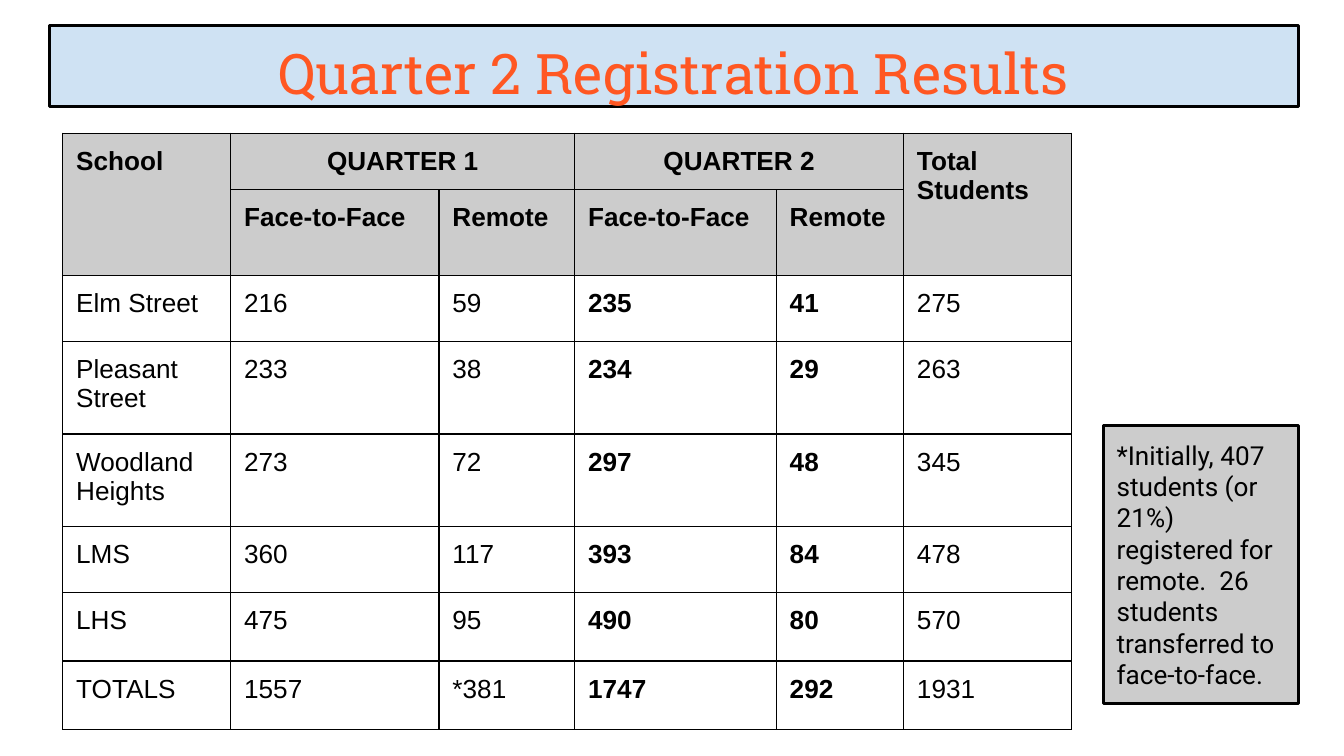
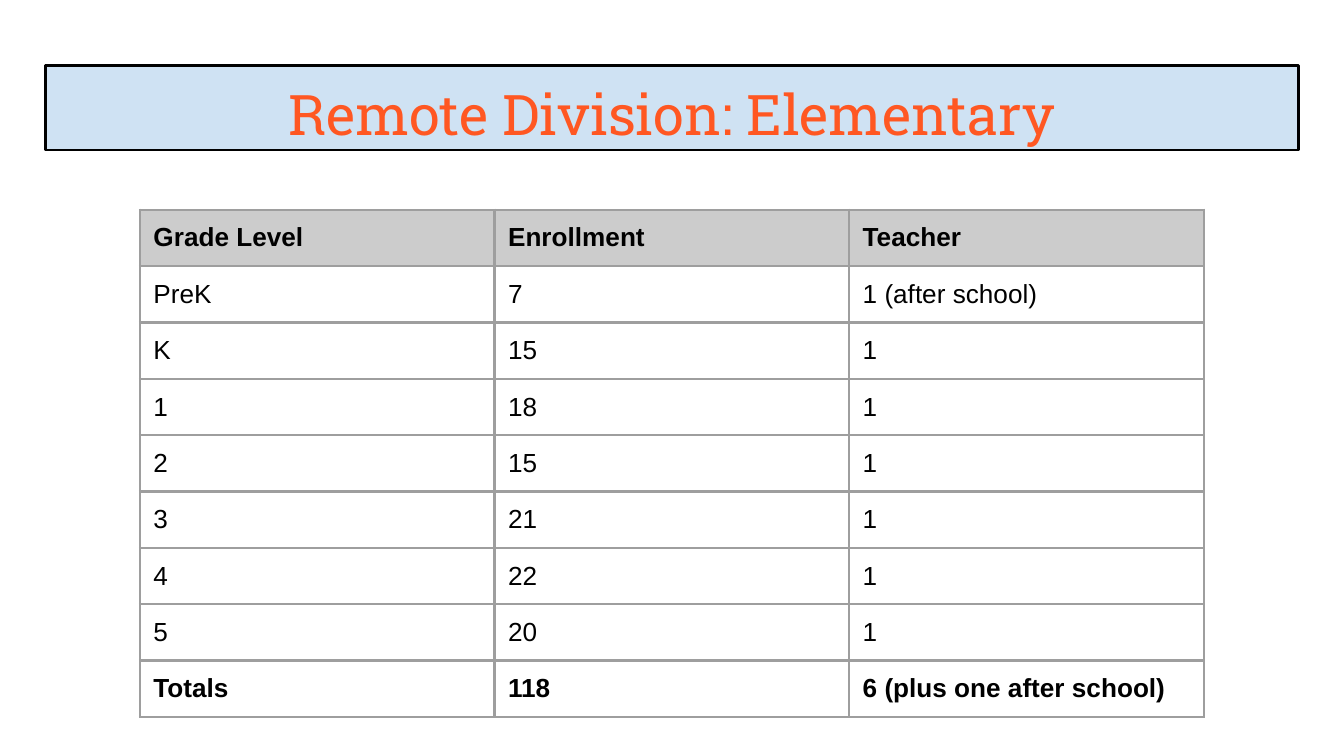
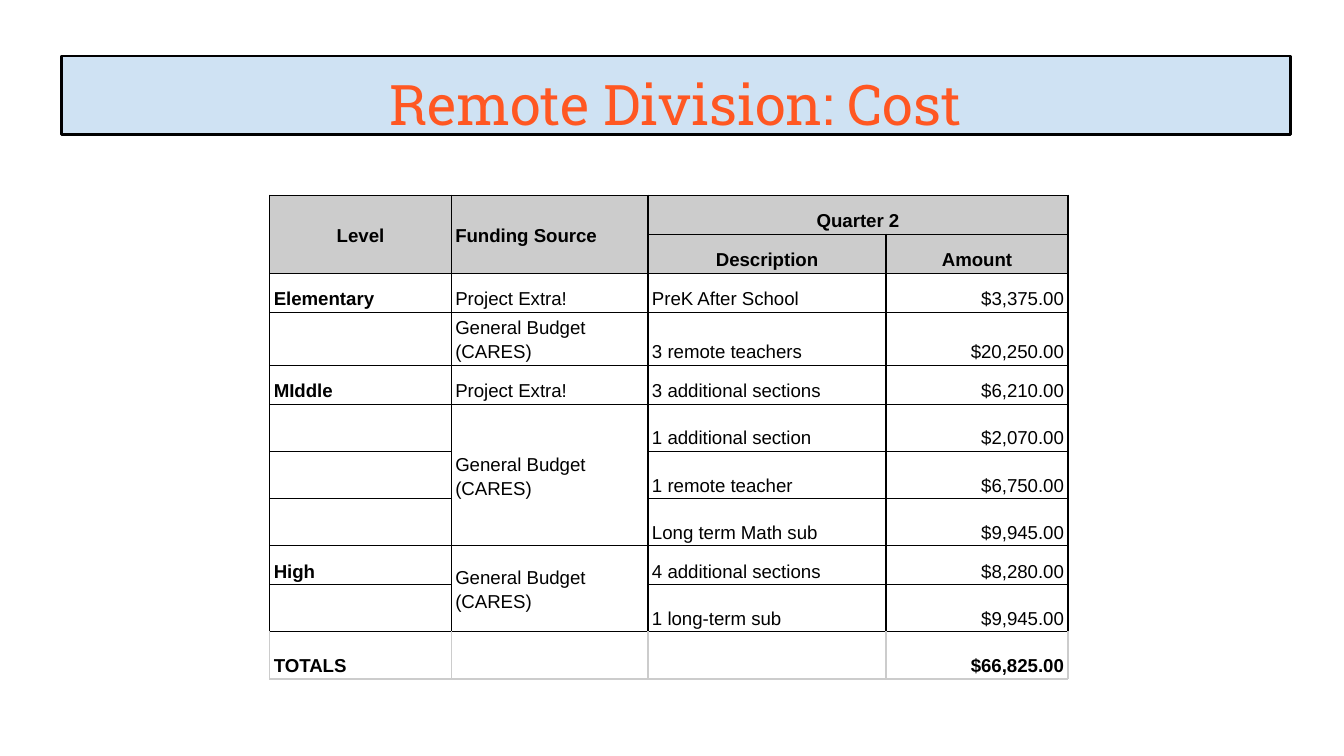
"""Build three slides on remote learning: registration, enrolment and cost."""
from lxml import etree
from pptx import Presentation
from pptx.dml.color import RGBColor
from pptx.enum.shapes import MSO_SHAPE
from pptx.enum.text import MSO_ANCHOR, PP_ALIGN
from pptx.oxml.ns import qn
from pptx.util import Pt

RECT = MSO_SHAPE.RECTANGLE
LEFT, CENTER, RIGHT = PP_ALIGN.LEFT, PP_ALIGN.CENTER, PP_ALIGN.RIGHT
TOP, MIDDLE, BOTTOM = MSO_ANCHOR.TOP, MSO_ANCHOR.MIDDLE, MSO_ANCHOR.BOTTOM

COLORS = {
    "title": "FF5722",
    "band": "CFE2F3",
    "header": "CCCCCC",
    "text": "000000",
    "line": "000000",
    "grid": "9E9E9E",
    "pale_line": "CCCCCC",
}
BODY_FONT, NOTE_FONT, TITLE_FONT = "Arial", "Roboto", "Roboto Slab"
INSET = 7.2

REGISTRATION = [
    ["School", "QUARTER 1", None, "QUARTER 2", None, "Total Students"],
    [None, "Face-to-Face", "Remote", "Face-to-Face", "Remote", None],
    ["Elm Street", "216", "59", "235", "41", "275"],
    ["Pleasant Street", "233", "38", "234", "29", "263"],
    ["Woodland Heights", "273", "72", "297", "48", "345"],
    ["LMS", "360", "117", "393", "84", "478"],
    ["LHS", "475", "95", "490", "80", "570"],
    ["TOTALS", "1557", "*381", "1747", "292", "1931"],
]
ENROLLMENT = [
    ["Grade Level", "Enrollment", "Teacher"],
    ["PreK", "7", "1 (after school)"],
    ["K", "15", "1"],
    ["1", "18", "1"],
    ["2", "15", "1"],
    ["3", "21", "1"],
    ["4", "22", "1"],
    ["5", "20", "1"],
    ["Totals", "118", "6 (plus one after school)"],
]
COST = [
    ["Level", "Funding Source", "Quarter 2", None],
    [None, None, "Description", "Amount"],
    ["Elementary", "Project Extra!", "PreK After School", "$3,375.00"],
    ["", "General Budget (CARES)", "3 remote teachers", "$20,250.00"],
    ["MIddle", "Project Extra!", "3 additional sections", "$6,210.00"],
    ["", "General Budget (CARES)", "1 additional section", "$2,070.00"],
    ["", None, "1 remote teacher", "$6,750.00"],
    ["", None, "Long term Math sub", "$9,945.00"],
    ["High", "General Budget (CARES)", "4 additional sections", "$8,280.00"],
    ["", None, "1 long-term sub", "$9,945.00"],
    ["TOTALS", "", "", "$66,825.00"],
]


def rgb(name):
    """Return the named colour."""
    return RGBColor.from_string(COLORS[name])


def style_text(tf, font, size, color="text", bold=False, align=LEFT):
    """Format every run of a text frame."""
    for p in tf.paragraphs:
        p.alignment = align
        for r in p.runs:
            r.font.name = font
            r.font.size = Pt(size)
            r.font.bold = bold
            r.font.color.rgb = rgb(color)


def add_panel(s, box, text, fill, font, size, color="text", align=LEFT):
    """Add an outlined rectangle holding text that starts at the top."""
    sp = s.shapes.add_shape(RECT, *map(Pt, box))
    sp.shadow.inherit = False
    sp.fill.solid()
    sp.fill.fore_color.rgb = rgb(fill)
    sp.line.color.rgb = rgb("line")
    sp.line.width = Pt(1.5)
    tf = sp.text_frame
    tf.word_wrap = True
    tf.vertical_anchor = TOP
    tf.margin_left = tf.margin_right = Pt(INSET)
    tf.margin_top = tf.margin_bottom = Pt(INSET)
    tf.text = text
    style_text(tf, font, size, color, align=align)


def add_title(s, box, text):
    """Add the title band."""
    add_panel(s, box, text, "band", TITLE_FONT, 30, "title", CENTER)


def set_borders(cell, color, width, top=None):
    """Draw the four borders of a cell; the top one may differ in colour."""
    tc_pr = cell._tc.get_or_add_tcPr()
    for side in "LRTB":
        name = top if side == "T" and top else color
        ln = etree.SubElement(tc_pr, qn(f"a:ln{side}"), w=str(Pt(width)))
        fill = etree.SubElement(ln, qn("a:solidFill"))
        etree.SubElement(fill, qn("a:srgbClr"), val=COLORS[name])


def add_grid(s, origin, widths, heights, data, size, bold, border,
             header_rows=1, merges=(), align=None, anchor=None,
             insets=(INSET, INSET), spacing=None):
    """Add a table; bold, border, align and anchor are rules by row and column."""
    x, y = origin
    frame = s.shapes.add_table(len(data), len(widths), Pt(x), Pt(y),
                               Pt(sum(widths)), Pt(sum(heights)))
    table = frame.table
    table.first_row = table.horz_banding = False
    for col, width in zip(table.columns, widths):
        col.width = Pt(width)
    for row, height in zip(table.rows, heights):
        row.height = Pt(height)
    for r, values in enumerate(data):
        for c, value in enumerate(values):
            cell = table.cell(r, c)
            set_borders(cell, *border(r, c))
            if r < header_rows:
                cell.fill.solid()
                cell.fill.fore_color.rgb = rgb("header")
            else:
                cell.fill.background()
            cell.margin_left = cell.margin_right = Pt(insets[0])
            cell.margin_top = cell.margin_bottom = Pt(insets[1])
            cell.vertical_anchor = anchor(r, c) if anchor else TOP
            if value:
                tf = cell.text_frame
                tf.text = value
                style_text(tf, BODY_FONT, size, bold=bold(r, c),
                           align=align(r, c) if align else LEFT)
                if spacing:
                    tf.paragraphs[0].line_spacing = spacing
    for first, last in merges:
        table.cell(*first).merge(table.cell(*last))


def registration_slide(s):
    """Fill the slide with registration by school and its note."""
    add_title(s, (26.6, 13.6, 668.9, 43.4), "Quarter 2 Registration Results")
    add_grid(
        s, (33.6, 71.4), (90, 111.6, 72.7, 108, 68.2, 90),
        (30.2, 30.2, 35.3, 49.7, 49.7, 35.3, 36.7, 36.7),
        REGISTRATION, 14, header_rows=2,
        bold=lambda r, c: r < 2 or c in (3, 4),
        border=lambda r, c: ("line", 0.75),
        align=lambda r, c: CENTER if r == 0 and c in (1, 3) else LEFT,
        merges=[((0, 0), (1, 0)), ((0, 1), (0, 2)),
                ((0, 3), (0, 4)), ((0, 5), (1, 5))])
    add_panel(s, (591.1, 228, 104.4, 149),
              "*Initially, 407 students (or 21%) registered for remote.  "
              "26 students transferred to face-to-face.",
              "header", NOTE_FONT, 14)


def enrollment_slide(s):
    """Fill the slide with elementary enrolment by grade."""
    add_title(s, (24.4, 35.2, 671.2, 45.2), "Remote Division: Elementary")
    last = len(ENROLLMENT) - 1
    add_grid(s, (75, 112.4), [190] * 3, [30.2] * len(ENROLLMENT),
             ENROLLMENT, 14,
             bold=lambda r, c: r in (0, last),
             border=lambda r, c: ("grid", 1.5))


def cost_slide(s):
    """Fill the slide with the cost by level and funding source."""
    add_title(s, (33, 30, 658.2, 42), "Remote Division: Cost")
    last = len(COST) - 1
    merges = [((0, 0), (1, 0)), ((0, 1), (1, 1)), ((0, 2), (0, 3)),
              ((5, 1), (7, 1)), ((8, 1), (9, 1))]
    tall = [first for first, end in merges if end[0] > first[0]]

    def border(r, c):
        """Return pale borders under a dark line for the totals."""
        return ("pale_line", 0.75, "line") if r == last else ("line", 0.75)

    def align(r, c):
        """Centre headings and set amounts to the right."""
        if r < 2:
            return LEFT if c == 1 else CENTER
        return RIGHT if c == 3 else LEFT

    add_grid(
        s, (144.5, 104.6), (97.2, 105.4, 127.6, 97.4),
        [25.2 if row[0] == "" or r == last else 20.9
         for r, row in enumerate(COST)],
        COST, 10, header_rows=2, merges=merges, border=border, align=align,
        bold=lambda r, c: r < 2 or c == 0 or r == last,
        anchor=lambda r, c: MIDDLE if (r, c) in tall else BOTTOM,
        insets=(2.2, 1.5), spacing=1.15)


def main():
    """Build and save the presentation."""
    prs = Presentation()
    prs.slide_width, prs.slide_height = Pt(720), Pt(405)
    for build in (registration_slide, enrollment_slide, cost_slide):
        build(prs.slides.add_slide(prs.slide_layouts[6]))
    prs.save("out.pptx")


if __name__ == "__main__":
    main()
